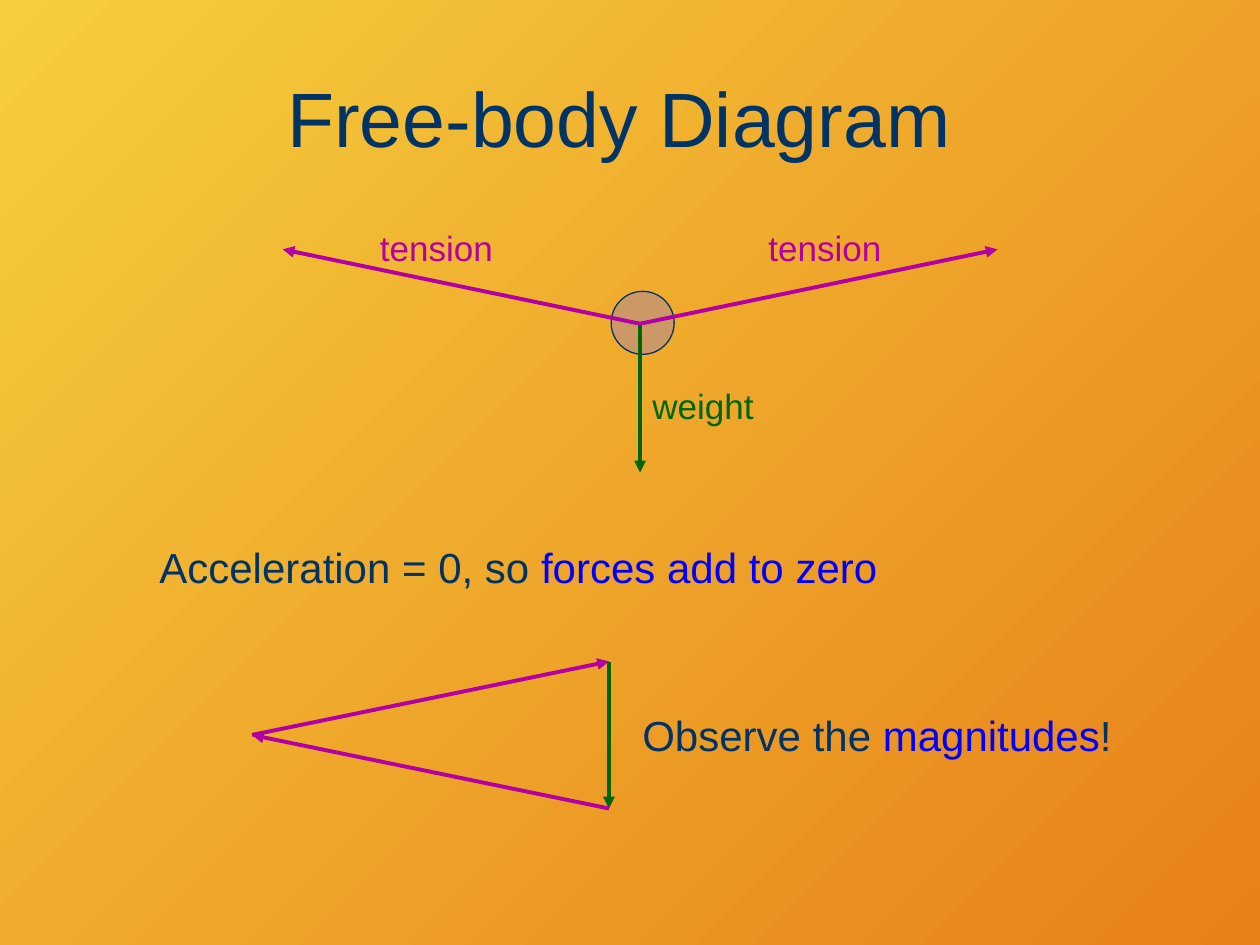
from lxml import etree
from pptx import Presentation
from pptx.dml.color import RGBColor
from pptx.enum import shapes, text
from pptx.oxml import ns
from pptx.util import Pt

NAVY = RGBColor(0x00, 0x33, 0x66)
BLUE = RGBColor(0x00, 0x00, 0xFF)
GREEN = RGBColor(0x00, 0x66, 0x00)
PURPLE = RGBColor(0xB3, 0x00, 0xA4)
TAN = RGBColor(0xCC, 0x99, 0x66)
YELLOW = RGBColor(0xF5, 0xCE, 0x3D)
ORANGE = RGBColor(0xE8, 0x80, 0x18)


def paint_background(slide):
    fill = slide.background.fill
    fill.gradient()
    fill.gradient_angle = 315
    for stop, position, color in zip(fill.gradient_stops, (0, 1), (YELLOW, ORANGE)):
        stop.position = position
        stop.color.rgb = color


def add_text(slide, box, parts, size):
    """Place one line of text made of (wording, colour) parts."""
    frame = slide.shapes.add_textbox(*map(Pt, box)).text_frame
    frame.word_wrap = True
    paragraph = frame.paragraphs[0]
    for wording, color in parts:
        run = paragraph.add_run()
        run.text = wording
        run.font.name = "Arial"
        run.font.size = Pt(size)
        run.font.color.rgb = color
    return frame


def add_arrow(slide, start, end, color):
    arrow = slide.shapes.add_connector(
        shapes.MSO_CONNECTOR.STRAIGHT, *map(Pt, (*start, *end)))
    arrow.line.color.rgb = color
    arrow.line.width = Pt(2.25)
    etree.SubElement(arrow.line._get_or_add_ln(), ns.qn("a:tailEnd"), type="triangle")
    etree.SubElement(arrow._element.spPr, ns.qn("a:effectLst"))


def add_title(slide, box):
    frame = add_text(slide, box, [("Free-body Diagram ", NAVY)], 44)
    frame.vertical_anchor = text.MSO_ANCHOR.MIDDLE
    frame.paragraphs[0].alignment = text.PP_ALIGN.CENTER


def add_force_diagram(slide, box):
    left, top, width, height = box
    center, knot = left + width / 2, top + 42.5

    # Body on which the forces act
    body = slide.shapes.add_shape(
        shapes.MSO_SHAPE.OVAL, Pt(center - 16.5), Pt(knot - 18.5), Pt(36), Pt(36))
    body.shadow.inherit = False
    body.fill.solid()
    body.fill.fore_color.rgb = TAN
    body.line.color.rgb = NAVY
    body.line.width = Pt(0.75)

    # Weight
    add_arrow(slide, (center, knot + 1), (center, top + height), GREEN)
    add_text(slide, (center, top + 73.5, 78, 31), [("weight", GREEN)], 20)

    # Tension on each side
    for tip, label_left in ((left + width, left + 270.5), (left, left + 48.5)):
        add_arrow(slide, (center, knot), (tip, top), PURPLE)
        add_text(slide, (label_left, top - 16.5, 84, 31), [("tension", PURPLE)], 20)


def add_force_triangle(slide, box):
    left, top, width, height = box
    right, bottom = left + width, top + height
    apex = (left, top + height / 2)
    add_arrow(slide, (right, top + 0.5), (right, bottom), GREEN)
    add_arrow(slide, apex, (right, top), PURPLE)
    add_arrow(slide, (right, bottom), apex, PURPLE)


def main():
    presentation = Presentation()
    presentation.slide_width, presentation.slide_height = Pt(720), Pt(540)
    slide = presentation.slides.add_slide(presentation.slide_layouts[6])
    paint_background(slide)
    add_title(slide, (36, 21.6, 648, 90))
    add_force_diagram(slide, (161.5, 142.5, 408.5, 127.5))
    add_force_triangle(slide, (144, 378, 204, 84))

    # Conclusions
    add_text(slide, (84, 306, 450, 36),
             [("Acceleration = 0, so ", NAVY), ("forces add to zero", BLUE)], 24)
    add_text(slide, (360, 402, 294, 36),
             [("Observe the ", NAVY), ("magnitudes", BLUE), ("!", NAVY)], 24)
    presentation.save("out.pptx")


if __name__ == "__main__":
    main()
